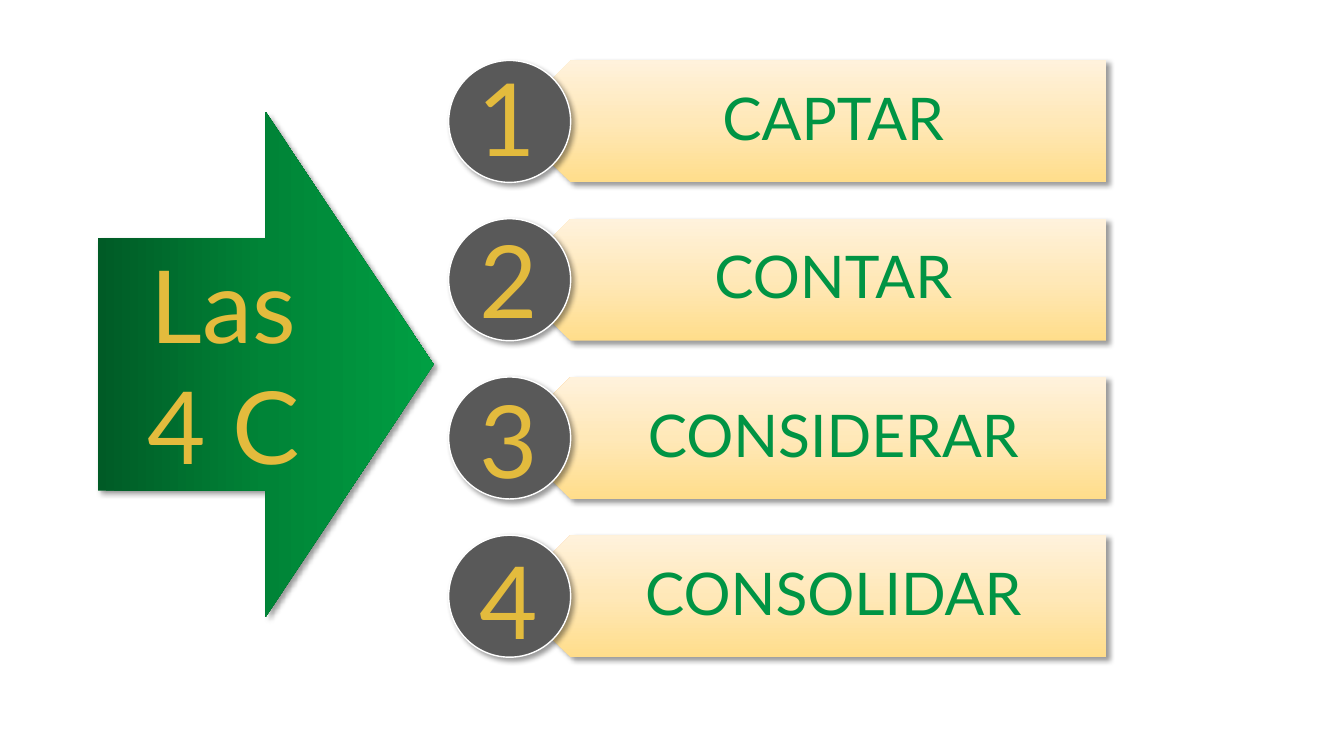
from lxml import etree
from pptx import Presentation
from pptx.dml.color import RGBColor
from pptx.enum import shapes, text
from pptx.oxml import parse_xml
from pptx.util import Inches, Pt

NS = "http://schemas.openxmlformats.org/drawingml/2006/main"
KIND = shapes.MSO_SHAPE
GOLD, GREEN = "E3BB3D", "009444"
CREAM = ("FFDD8B", "FFE8B8", "FFF2DC")
LEAF = ("005B26", "008437", "009F43")


def color(code):
    return RGBColor.from_string(code)


def shade(shape):
    shape.shadow.inherit = False
    effects = shape._element.spPr.find(f"{{{NS}}}effectLst")
    drop = etree.SubElement(effects, f"{{{NS}}}outerShdw", blurRad=str(Pt(4)),
                            dist=str(Pt(3)), dir="2700000", algn="tl", rotWithShape="0")
    tint = etree.SubElement(drop, f"{{{NS}}}srgbClr", val="000000")
    etree.SubElement(tint, f"{{{NS}}}alpha", val="40000")


def blend(shape, codes, angle):
    """Fill with evenly spaced colours, turning clockwise by angle in degrees."""
    stops = "".join(f'<a:gs pos="{i * 50000}"><a:srgbClr val="{code}"/></a:gs>'
                    for i, code in enumerate(codes))
    fill = parse_xml(f'<a:gradFill xmlns:a="{NS}" rotWithShape="1"><a:gsLst>{stops}</a:gsLst>'
                     f'<a:lin ang="{angle * 60000}" scaled="0"/></a:gradFill>')
    shape._element.spPr.find(f"{{{NS}}}prstGeom").addnext(fill)


def add_form(slide, kind, box):
    form = slide.shapes.add_shape(kind, *map(Inches, box))
    form.line.fill.background()
    shade(form)
    return form


def write(frame, lines, size, code, align):
    frame.word_wrap = True
    for i, line in enumerate(lines):
        para = frame.paragraphs[0] if i == 0 else frame.add_paragraph()
        para.text = line
        para.alignment = align
        para.font.name = "Lato"
        para.font.size = Pt(size)
        para.font.color.rgb = color(code)


def add_arrow(slide, box):
    arrow = add_form(slide, KIND.RIGHT_ARROW, box)
    blend(arrow, LEAF, 0)
    frame = arrow.text_frame
    frame.vertical_anchor = text.MSO_ANCHOR.TOP
    write(frame, ["Las", "4 C"], 72, GOLD, text.PP_ALIGN.CENTER)


def add_step(slide, box, word):
    """Draw a banner with its word and a disc over the banner's left tip."""
    left, top, width, high = box
    banner = add_form(slide, KIND.PENTAGON, (left + high / 2, top, width - high / 2, high))
    banner.rotation = 180
    blend(banner, CREAM, 90)

    inset = 0.91
    label = slide.shapes.add_textbox(*map(Inches, (left + inset, top, width - inset, high)))
    frame = label.text_frame
    frame.vertical_anchor = text.MSO_ANCHOR.MIDDLE
    frame.margin_left, frame.margin_right = Inches(0.53), Inches(0.33)
    frame.margin_top = frame.margin_bottom = Inches(0.17)
    write(frame, [word], 42, GREEN, text.PP_ALIGN.CENTER)
    frame.paragraphs[0].line_spacing = 0.9

    disc = add_form(slide, KIND.OVAL, (left, top, high, high))
    disc.fill.solid()
    disc.fill.fore_color.rgb = color("595959")
    disc.line.color.rgb = color("FFFFFF")
    disc.line.width = Pt(1)


def add_digit(slide, box, digit):
    label = slide.shapes.add_textbox(*map(Inches, box))
    write(label.text_frame, [digit], 72, GOLD, text.PP_ALIGN.LEFT)
    label.text_frame.auto_size = text.MSO_AUTO_SIZE.SHAPE_TO_FIT_TEXT


def main():
    deck = Presentation()
    deck.slide_width, deck.slide_height = Inches(13.33), Inches(7.5)
    slide = deck.slides.add_slide(deck.slide_layouts[6])
    words = ["CAPTAR", "CONTAR", "CONSIDERAR", "CONSOLIDAR"]
    for i, word in enumerate(words):
        add_step(slide, (4.45, 0.6 + i * 1.57, 6.52, 1.21), word)
    add_arrow(slide, (0.97, 1.11, 3.33, 5.01))
    spots = [(4.64, 0.5), (4.66, 2.11), (4.66, 3.7), (4.66, 5.29)]
    for i, (left, top) in enumerate(spots, 1):
        add_digit(slide, (left, top, 0.73, 1.31), str(i))
    deck.save("out.pptx")


if __name__ == "__main__":
    main()
